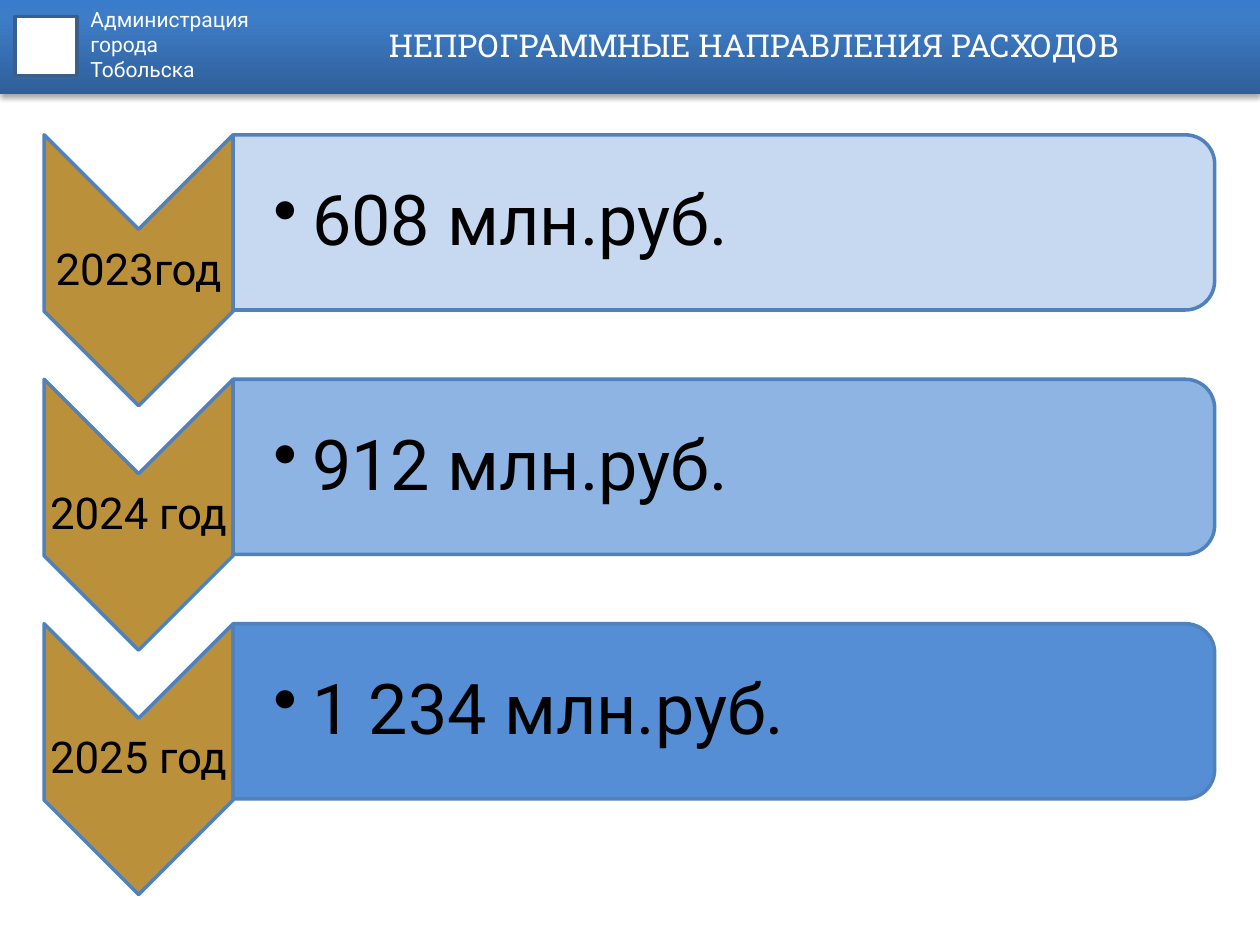
from copy import deepcopy
from dataclasses import dataclass

from lxml import etree
from pptx import Presentation
from pptx import util as u
from pptx.dml.color import RGBColor
from pptx.enum import shapes, text
from pptx.oxml.ns import qn

WHITE = RGBColor(0xFF, 0xFF, 0xFF)
BLACK = RGBColor(0, 0, 0)
GOLD = RGBColor(0xBB, 0x90, 0x3B)
OUTLINE = RGBColor(0x4F, 0x81, 0xBD)
EMBLEM_LINE = RGBColor(0x3A, 0x5F, 0x8C)
HEADER_STOPS = (
    (0, RGBColor(0x2F, 0x5F, 0x99)),
    (0.8, RGBColor(0x3D, 0x7C, 0xC7)),
    (1, RGBColor(0x3A, 0x7C, 0xCB)),
)

FIRST_TOP, ROW_PITCH = 1.07, 1.94
CHEVRON_LEFT, CHEVRON_W, CHEVRON_H = 0.35, 1.5, 2.15
BAR_LEFT, BAR_W, BAR_H = 1.85, 7.79, 1.39


@dataclass
class YearRow:
    year: str
    amount: str
    color: RGBColor


@dataclass
class Box:
    left: float
    top: float
    width: float
    height: float

    def lengths(self) -> list[u.Length]:
        return [u.Inches(v) for v in (self.left, self.top, self.width, self.height)]

    def turned(self) -> "Box":
        """Frame that fills this box once rotated by 90 degrees."""
        shift = (self.width - self.height) / 2
        return Box(self.left + shift, self.top - shift, self.height, self.width)


ROWS = (
    YearRow("2023год", "608 млн.руб.", RGBColor(0xC6, 0xD9, 0xF1)),
    YearRow("2024 год", "912 млн.руб.", RGBColor(0x8E, 0xB4, 0xE3)),
    YearRow("2025 год", "1 234 млн.руб.", RGBColor(0x55, 0x8E, 0xD5)),
)


def add_outlined(s, kind, box: Box, fill: RGBColor, line: RGBColor, rotation: int = 0):
    sp = s.shapes.add_shape(kind, *box.lengths())
    sp.rotation = rotation
    sp.shadow.inherit = False
    sp.fill.solid()
    sp.fill.fore_color.rgb = fill
    sp.line.color.rgb = line
    sp.line.width = u.Pt(2)
    return sp


def add_text(s, box: Box, lines: list[str], size: int, color: RGBColor,
             font: str = "Roboto", align=text.PP_ALIGN.LEFT,
             anchor=text.MSO_ANCHOR.MIDDLE, insets=None, spacing: float = 1.0):
    tf = s.shapes.add_textbox(*box.lengths()).text_frame
    tf.word_wrap = True
    tf.vertical_anchor = anchor
    if insets:
        tf.margin_left, tf.margin_top, tf.margin_right, tf.margin_bottom = map(u.Inches, insets)
    for i, line in enumerate(lines):
        p = tf.add_paragraph() if i else tf.paragraphs[0]
        p.alignment = align
        p.line_spacing = spacing
        r = p.add_run()
        r.text = line
        r.font.size = u.Pt(size)
        r.font.name = font
        r.font.color.rgb = color
    return tf


def add_bullet(p, indent: float) -> None:
    p.level = 1
    pPr = p._p.get_or_add_pPr()
    pPr.set("marL", str(u.Inches(indent)))
    pPr.set("indent", str(-u.Inches(indent)))
    etree.SubElement(pPr, qn("a:buChar"), char="•")


def add_header(s) -> None:
    sp = s.shapes.add_shape(shapes.MSO_SHAPE.RECTANGLE, *Box(0, 0, 10, 0.75).lengths())
    sp.line.fill.background()
    # Three-stop vertical gradient
    sp.fill.gradient()
    sp.fill.gradient_angle = 90
    stop_list = sp._element.spPr.find(".//" + qn("a:gsLst"))
    stop_list.append(deepcopy(stop_list[-1]))
    for stop, (position, color) in zip(sp.fill.gradient_stops, HEADER_STOPS):
        stop.position = position
        stop.color.rgb = color
    # Soft shadow below the band
    sp.shadow.inherit = False
    effects = sp._element.spPr.find(qn("a:effectLst"))
    shadow = etree.SubElement(effects, qn("a:outerShdw"), blurRad=str(u.Pt(3.1)),
                              dist=str(u.Pt(1.8)), dir="5400000", rotWithShape="0")
    tint = etree.SubElement(shadow, qn("a:srgbClr"), val="000000")
    etree.SubElement(tint, qn("a:alpha"), val="35000")


def add_row(s, row: YearRow, top: float) -> None:
    chevron = Box(CHEVRON_LEFT, top, CHEVRON_W, CHEVRON_H)
    add_outlined(s, shapes.MSO_SHAPE.CHEVRON, chevron.turned(), GOLD, OUTLINE, 90)
    add_text(s, Box(CHEVRON_LEFT, top + 0.76, CHEVRON_W, 0.64), [row.year], 25, BLACK,
             align=text.PP_ALIGN.CENTER, insets=(0.02,) * 4, spacing=0.9)
    bar = Box(BAR_LEFT, top, BAR_W, BAR_H)
    add_outlined(s, shapes.MSO_SHAPE.ROUND_2_SAME_RECTANGLE, bar.turned(),
                 row.color, OUTLINE, 90)
    tf = add_text(s, Box(BAR_LEFT + 0.01, top + 0.07, 7.72, 1.26), [row.amount], 40, BLACK,
                  insets=(0.31, 0.03, 0.03, 0.03), spacing=0.9)
    add_bullet(tf.paragraphs[0], 0.31)


def main() -> None:
    prs = Presentation()
    prs.slide_width, prs.slide_height = u.Inches(10), u.Inches(7.5)
    s = prs.slides.add_slide(prs.slide_layouts[6])

    # Header band, emblem square, organisation and title
    add_header(s)
    add_outlined(s, shapes.MSO_SHAPE.RECTANGLE, Box(0.12, 0.13, 0.49, 0.47),
                 WHITE, EMBLEM_LINE)
    add_text(s, Box(0.62, 0, 2.34, 0.91), ["Администрация", "города", "Тобольска"],
             12, WHITE, anchor=text.MSO_ANCHOR.TOP)
    add_text(s, Box(1.97, 0, 8.03, 0.71), ["НЕПРОГРАММНЫЕ НАПРАВЛЕНИЯ РАСХОДОВ"],
             18, WHITE, font="Roboto Slab", align=text.PP_ALIGN.CENTER)

    # One chevron and bar per year
    for i, row in enumerate(ROWS):
        add_row(s, row, FIRST_TOP + i * ROW_PITCH)

    prs.save("out.pptx")


if __name__ == "__main__":
    main()
